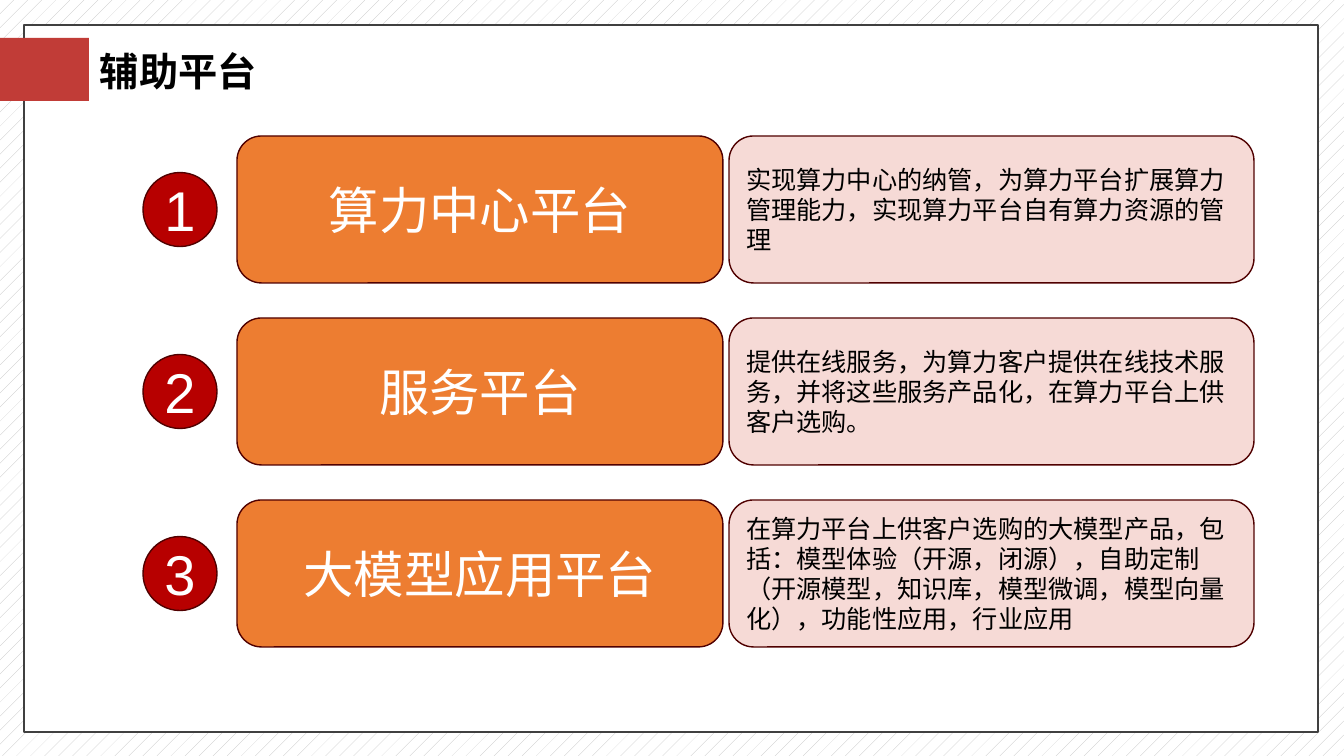
from lxml import etree
from pptx import Presentation
from pptx.dml.color import RGBColor
from pptx.enum.dml import MSO_PATTERN
from pptx.enum.shapes import MSO_SHAPE
from pptx.enum.text import MSO_ANCHOR, PP_ALIGN
from pptx.oxml.ns import qn
from pptx.util import Emu, Pt

RECT, ROUNDED, OVAL = MSO_SHAPE.RECTANGLE, MSO_SHAPE.ROUNDED_RECTANGLE, MSO_SHAPE.OVAL
LEFT, CENTER = PP_ALIGN.LEFT, PP_ALIGN.CENTER
MIDDLE = MSO_ANCHOR.MIDDLE
DOTS = MSO_PATTERN.PERCENT_5

SLIDE_W, SLIDE_H = 1344, 756
EMU_PER_PX = 12192000 / SLIDE_W
HEADING_FONT, BODY_FONT = "Noto Sans CJK SC", "Arial"
WHITE, BLACK, OUTLINE = "FFFFFF", "000000", "500000"

PLATFORMS = [
    ("算力中心平台",
     "实现算力中心的纳管，为算力平台扩展算力管理能力，实现算力平台自有算力资源的管理"),
    ("服务平台",
     "提供在线服务，为算力客户提供在线技术服务，并将这些服务产品化，在算力平台上供客户选购。"),
    ("大模型应用平台",
     "在算力平台上供客户选购的大模型产品，包括：模型体验（开源，闭源），自助定制"
     "（开源模型，知识库，模型微调，模型向量化），功能性应用，行业应用"),
]


def px(length):
    return Emu(round(length * EMU_PER_PX))


def rgb(color):
    return RGBColor.from_string(color)


def add_box(slide, preset, box, fill, line=None, line_pt=1):
    shape = slide.shapes.add_shape(preset, *map(px, box))
    shape.shadow.inherit = False
    shape.fill.solid()
    shape.fill.fore_color.rgb = rgb(fill)
    if line:
        shape.line.color.rgb = rgb(line)
        shape.line.width = Pt(line_pt)
    else:
        shape.line.fill.background()
    return shape


def write(shape, text, size, color, align=LEFT, font=BODY_FONT, bold=False):
    shape.text_frame.word_wrap = True
    paragraph = shape.text_frame.paragraphs[0]
    paragraph.alignment = align
    run = paragraph.add_run()
    run.text = text
    run.font.size = Pt(size)
    run.font.bold = bold
    run.font.color.rgb = rgb(color)
    run.font.name = font
    # East Asian characters take their typeface from a:ea
    etree.SubElement(run.font._element, qn("a:ea"), typeface=font)


def draw_backdrop(slide):
    fill = slide.background.fill
    fill.patterned()
    fill.pattern = DOTS
    fill.fore_color.rgb = rgb("BFBFBF")
    fill.back_color.rgb = rgb(WHITE)
    margin = 25
    add_box(slide, RECT, (margin - 1, margin, SLIDE_W - 2 * margin, SLIDE_H - 2 * margin + 1),
            WHITE, "404040", 2)


def draw_heading(slide, left, top, width, height):
    tab_width = 92
    add_box(slide, RECT, (left, top, tab_width, height), "C13C37")
    heading = slide.shapes.add_textbox(px(left + tab_width + 1), px(top + 4),
                                       px(width - tab_width - 1), px(height - 5))
    write(heading, "辅助平台", 28, BLACK, font=HEADING_FONT, bold=True)


def draw_platform(slide, left, top, width, height, number, name, description):
    badge, name_left, name_width, gap = 74, 94, 486, 6
    description_left = name_left + name_width + gap
    parts = [
        (OVAL, (left, top + (height - badge) / 2, badge, badge),
         "B70000", str(number), 40, WHITE, CENTER),
        (ROUNDED, (left + name_left, top, name_width, height),
         "ED7D31", name, 36, WHITE, CENTER),
        (ROUNDED, (left + description_left, top, width - description_left, height),
         "F6DAD6", description, 18, BLACK, LEFT),
    ]
    for preset, box, fill, text, size, color, align in parts:
        shape = add_box(slide, preset, box, fill, OUTLINE)
        shape.text_frame.vertical_anchor = MIDDLE
        write(shape, text, size, color, align)


def main():
    prs = Presentation()
    prs.slide_width, prs.slide_height = px(SLIDE_W), px(SLIDE_H)
    slide = prs.slides.add_slide(prs.slide_layouts[6])
    draw_backdrop(slide)
    draw_heading(slide, -3, 38, 674, 63)
    row_top, row_height, row_gap = 136, 147, 35
    for index, (name, description) in enumerate(PLATFORMS):
        draw_platform(slide, 143, row_top + index * (row_height + row_gap), 1111, row_height,
                      index + 1, name, description)
    prs.save("out.pptx")


if __name__ == "__main__":
    main()
